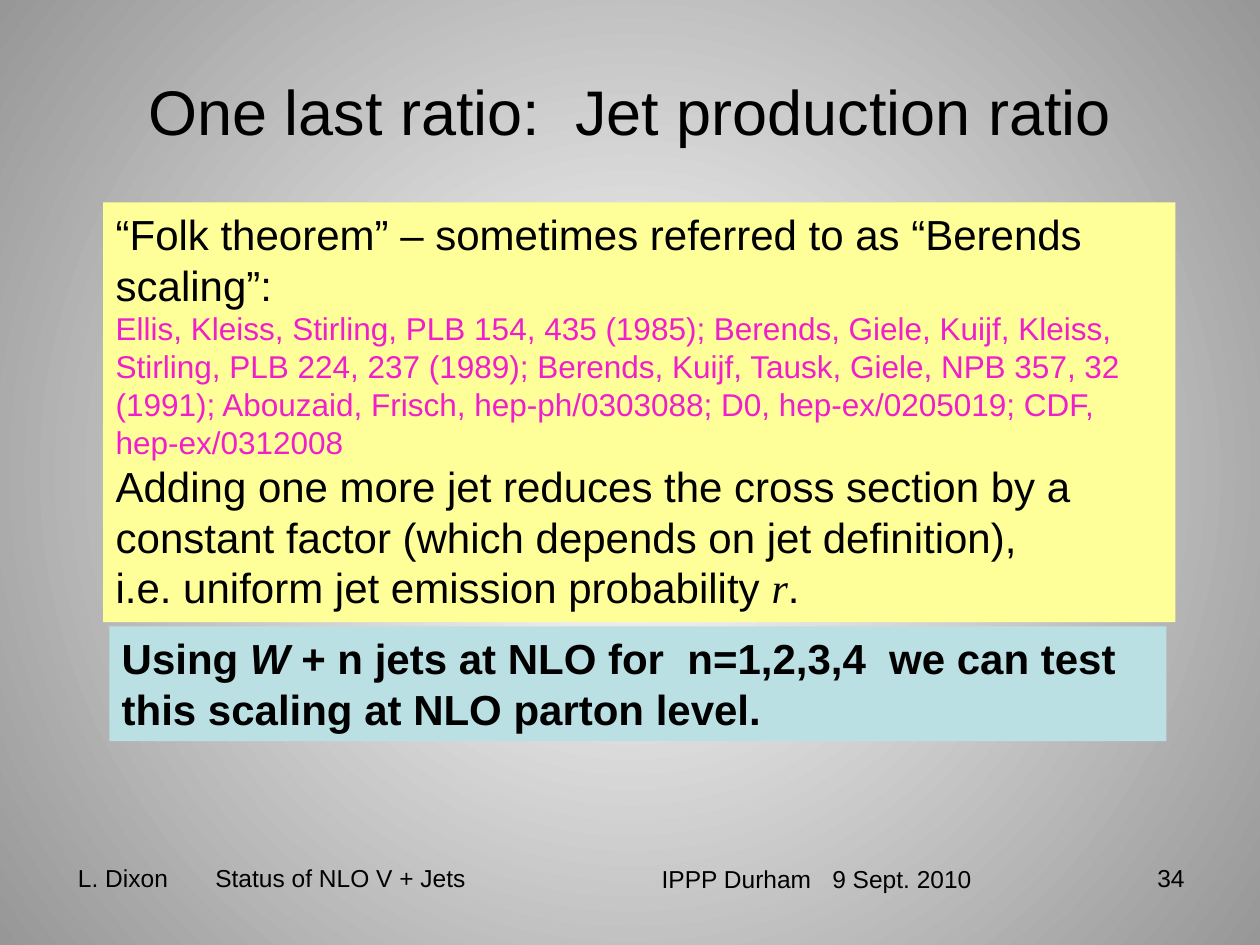
from lxml.etree import SubElement
from pptx import Presentation
from pptx.dml.color import RGBColor
from pptx.enum.text import MSO_ANCHOR as Anchor, PP_ALIGN as Align
from pptx.oxml.ns import qn
from pptx.util import Pt

BLACK = RGBColor(0, 0, 0)
WHITE = RGBColor(255, 255, 255)
GRAY = RGBColor(0x97, 0x97, 0x97)
MAGENTA = RGBColor(0xEF, 0x1F, 0xCC)
YELLOW = RGBColor(0xFF, 0xFF, 0x99)
PALE_BLUE = RGBColor(0xBB, 0xE0, 0xE3)

BREAK = ("\n", {})
TITLE = [[("One last ratio:  Jet production ratio", {})]]
THEOREM = [
    [("“Folk theorem” – sometimes referred to as “Berends scaling”:", {})],
    [("Ellis, Kleiss, Stirling, PLB 154, 435 (1985); Berends, Giele, Kuijf, Kleiss, "
      "Stirling, PLB 224, 237 (1989); Berends, Kuijf, Tausk, Giele, NPB 357, 32 (1991); "
      "Abouzaid, Frisch, hep-ph/0303088; D0, hep-ex/0205019; CDF, hep-ex/0312008",
      {"size": 18, "color": MAGENTA})],
    [("Adding one more jet reduces the cross section by a constant factor "
      "(which depends on jet definition),", {}),
     BREAK,
     ("i.e. uniform jet emission probability ", {}),
     ("r", {"font": "Times New Roman", "italic": True}),
     (".", {})],
]
TEST = [[
    ("Using ", {}),
    ("W", {"italic": True}),
    (" + n jets at NLO for  n=1,2,3,4  we can test this scaling at NLO parton level.", {}),
]]
FOOTERS = [
    ("L. Dixon\tStatus of NLO V + Jets", (37.5, 489.6, 333, 34.5), Align.LEFT, 78.5),
    ("IPPP Durham\t9 Sept. 2010", (371, 490.3, 223, 34), Align.LEFT, 97.5),
    ("34", (594.7, 489.6, 89.3, 37.5), Align.RIGHT, None),
]


def add_text(slide, paragraphs, box, size=24, font="Arial", color=BLACK, bold=False,
             fill=None, align=Align.LEFT, anchor=Anchor.TOP, tab=None):
    shape = slide.shapes.add_textbox(*map(Pt, box))
    if fill is not None:
        shape.fill.solid()
        shape.fill.fore_color.rgb = fill
    frame = shape.text_frame
    frame.word_wrap = True
    frame.vertical_anchor = anchor
    for index, parts in enumerate(paragraphs):
        paragraph = frame.add_paragraph() if index else frame.paragraphs[0]
        paragraph.alignment = align
        if tab:
            stops = SubElement(paragraph._p.get_or_add_pPr(), qn("a:tabLst"))
            SubElement(stops, qn("a:tab"), pos=str(Pt(tab)), algn="l")
        for text, style in parts:
            if text == "\n":
                paragraph.add_line_break()
                continue
            run = paragraph.add_run()
            run.text = text
            run.font.size = Pt(style.get("size", size))
            run.font.name = style.get("font", font)
            run.font.color.rgb = style.get("color", color)
            run.font.bold = bold
            run.font.italic = style.get("italic", False)


def set_radial_background(slide, inner, outer):
    fill = slide.background.fill
    fill.gradient()
    for stop, color, position in zip(fill.gradient_stops, (inner, outer), (0, 1)):
        stop.color.rgb = color
        stop.position = position
    gradient = slide._element.find(".//" + qn("a:gradFill"))
    gradient.remove(gradient.find(qn("a:lin")))
    circle = SubElement(gradient, qn("a:path"), path="circle")
    SubElement(circle, qn("a:fillToRect"), dict.fromkeys("ltrb", "50000"))


def main():
    presentation = Presentation()
    presentation.slide_width, presentation.slide_height = Pt(720), Pt(540)
    slide = presentation.slides.add_slide(presentation.slide_layouts[6])
    set_radial_background(slide, WHITE, GRAY)
    for text, box, align, tab in FOOTERS:
        add_text(slide, [[(text, {})]], box, size=14, align=align, tab=tab)
    add_text(slide, TITLE, (36, 18, 648, 90), size=36, align=Align.CENTER,
             anchor=Anchor.MIDDLE)
    add_text(slide, TEST, (62.5, 358, 604, 65.5), bold=True, fill=PALE_BLUE)
    add_text(slide, THEOREM, (59, 115.7, 612.7, 239.8), fill=YELLOW)
    presentation.save("out.pptx")


if __name__ == "__main__":
    main()
